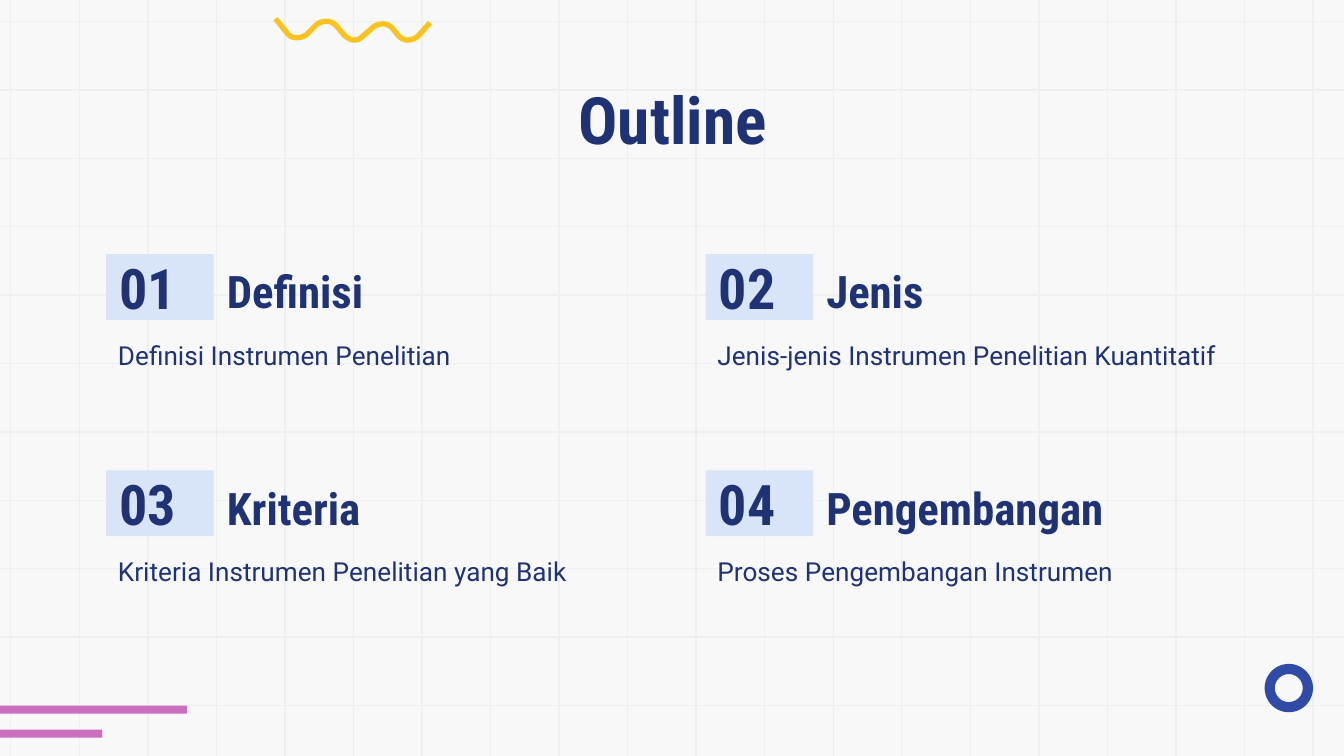
from math import hypot

from lxml import etree
from pptx import Presentation
from pptx.dml.color import RGBColor
from pptx.enum.shapes import MSO_CONNECTOR, MSO_SHAPE
from pptx.enum.text import MSO_ANCHOR, MSO_AUTO_SIZE, PP_ALIGN
from pptx.oxml.ns import qn
from pptx.util import Inches, Pt

RECTANGLE, DONUT = MSO_SHAPE.RECTANGLE, MSO_SHAPE.DONUT
STRAIGHT = MSO_CONNECTOR.STRAIGHT
TOP, MIDDLE = MSO_ANCHOR.TOP, MSO_ANCHOR.MIDDLE
LEFT, CENTER = PP_ALIGN.LEFT, PP_ALIGN.CENTER
NO_AUTOFIT = MSO_AUTO_SIZE.NONE

HEADING = "Outline"
TOPICS = [
    ("Definisi", "Definisi Instrumen Penelitian"),
    ("Jenis", "Jenis-jenis Instrumen Penelitian Kuantitatif"),
    ("Kriteria", "Kriteria Instrumen Penelitian yang Baik"),
    ("Pengembangan", "Proses Pengembangan Instrumen"),
]
PAPER, GRID, NAVY, PALE = "F8F8F8", "EFEFEF", "1F3374", "D8E4F7"
PINK, BLUE, YELLOW = "CB6EBE", "304BA6", "F8C220"
CONDENSED, REGULAR = "Roboto Condensed", "Roboto"

WIDTH = 10
HEIGHT = WIDTH * 9 / 16
ROWS, FIRST_ROW, LAST_ROW = 11, 0.16, 5.25
COLUMNS, FIRST_COLUMN, LAST_COLUMN = 20, 0.08, 9.77
TOPIC_LEFT, TOPIC_TOP, TOPIC_STEP_X, TOPIC_STEP_Y = 0.79, 1.89, 4.46, 1.61
BADGE_WIDTH, BADGE_HEIGHT = 0.8, 0.49
BARS = [(5.25, 1.39), (5.43, 0.76)]
WAVE_ENDS = (2.05, 0.14), (3.2, 0.17)
WAVE_BENDS = [
    ((2.14, 0.25), (2.17, 0.29), (2.23, 0.29), (2.28, 0.26)),
    ((2.36, 0.18), (2.41, 0.15), (2.46, 0.15), (2.5, 0.19)),
    ((2.56, 0.26), (2.61, 0.31), (2.66, 0.31), (2.7, 0.27)),
    ((2.78, 0.2), (2.83, 0.17), (2.88, 0.17), (2.92, 0.21)),
    ((2.96, 0.26), (3.0, 0.31), (3.06, 0.31), (3.11, 0.27)),
]
WAVE_HALF_THICKNESS = 0.02


def color(code):
    return RGBColor.from_string(code)


def box(*inches):
    return [Inches(value) for value in inches]


def evenly(first, last, count):
    return [first + (last - first) * i / (count - 1) for i in range(count)]


def paint(shape, code):
    shape.shadow.inherit = False
    shape.fill.solid()
    shape.fill.fore_color.rgb = color(code)
    shape.line.fill.background()
    return shape


def add_panel(slide, kind, place, code):
    return paint(slide.shapes.add_shape(kind, *box(*place)), code)


def write(shape, text, font_name, size, bold=True, anchor=MIDDLE, align=LEFT, spacing=1.0):
    frame = shape.text_frame
    frame.word_wrap = True
    frame.auto_size = NO_AUTOFIT
    frame.vertical_anchor = anchor
    frame.margin_left = frame.margin_right = Inches(0.1)
    frame.margin_top = frame.margin_bottom = Inches(0.1)
    frame.text = text
    paragraph = frame.paragraphs[0]
    paragraph.alignment = align
    paragraph.line_spacing = spacing
    paragraph.font.name, paragraph.font.size, paragraph.font.bold = font_name, Pt(size), bold
    paragraph.font.color.rgb = color(NAVY)


def add_grid(slide):
    rows = [(WIDTH, y, 0, y) for y in evenly(FIRST_ROW, LAST_ROW, ROWS)]
    columns = [(x, 0, x, HEIGHT) for x in evenly(FIRST_COLUMN, LAST_COLUMN, COLUMNS)]
    for ends in rows + columns:
        rule = slide.shapes.add_connector(STRAIGHT, *box(*ends))
        rule.line.color.rgb = color(GRID)
        rule.line.width = Pt(0.75)
        etree.SubElement(rule._element.spPr, qn("a:effectLst"))


def bend_point(bend, t):
    weights = (1 - t) ** 3, 3 * t * (1 - t) ** 2, 3 * t * t * (1 - t), t ** 3
    return tuple(sum(w * p[axis] for w, p in zip(weights, bend)) for axis in (0, 1))


def add_wave(slide):
    bends = [bend_point(bend, t) for bend in WAVE_BENDS for t in evenly(0, 1, 13)]
    centre = [WAVE_ENDS[0], *bends, WAVE_ENDS[1]]
    upper, lower = [], []
    for i, (x, y) in enumerate(centre):
        before, after = centre[max(i - 1, 0)], centre[min(i + 1, len(centre) - 1)]
        dx, dy = after[0] - before[0], after[1] - before[1]
        scale = WAVE_HALF_THICKNESS / hypot(dx, dy)
        upper.append((x + dy * scale, y - dx * scale))
        lower.append((x - dy * scale, y + dx * scale))
    outline = [box(*point) for point in upper + lower[::-1]]
    builder = slide.shapes.build_freeform(*outline[0])
    builder.add_line_segments(outline[1:], close=True)
    paint(builder.convert_to_shape(), YELLOW)


def add_decoration(slide):
    for top, length in BARS:
        add_panel(slide, RECTANGLE, (0, top, length, 0.06), PINK)
    ring = add_panel(slide, DONUT, (9.41, 4.94, 0.36, 0.36), BLUE)
    ring.adjustments[0] = 0.21
    add_wave(slide)


def add_heading(slide):
    title = slide.shapes.title
    title.left, title.top, title.width, title.height = box(0.79, 0.49, 8.43, 0.63)
    write(title, HEADING, CONDENSED, 35, anchor=TOP, align=CENTER)
    title._element.getparent().append(title._element)


def add_topic(slide, index, name, description):
    row, column = divmod(index, 2)
    left = TOPIC_LEFT + column * TOPIC_STEP_X
    top = TOPIC_TOP + row * TOPIC_STEP_Y
    badge = add_panel(slide, RECTANGLE, (left, top, BADGE_WIDTH, BADGE_HEIGHT), PALE)
    write(badge, f"{index + 1:02}", CONDENSED, 30)
    label = slide.shapes.add_textbox(*box(left + BADGE_WIDTH, top, 3.16, BADGE_HEIGHT))
    write(label, name, CONDENSED, 24, spacing=1.15)
    detail = slide.shapes.add_textbox(*box(left - 0.01, top + 0.5, 3.97, 0.4))
    write(detail, description, REGULAR, 14, bold=False, anchor=TOP, spacing=1.15)


def main():
    """Build the outline slide with its four numbered topics."""
    deck = Presentation()
    deck.slide_width, deck.slide_height = box(WIDTH, HEIGHT)
    slide = deck.slides.add_slide(deck.slide_layouts[5])
    slide.background.fill.solid()
    slide.background.fill.fore_color.rgb = color(PAPER)
    add_grid(slide)
    add_decoration(slide)
    add_heading(slide)
    for index, (name, description) in enumerate(TOPICS):
        add_topic(slide, index, name, description)
    deck.save("out.pptx")


if __name__ == "__main__":
    main()
